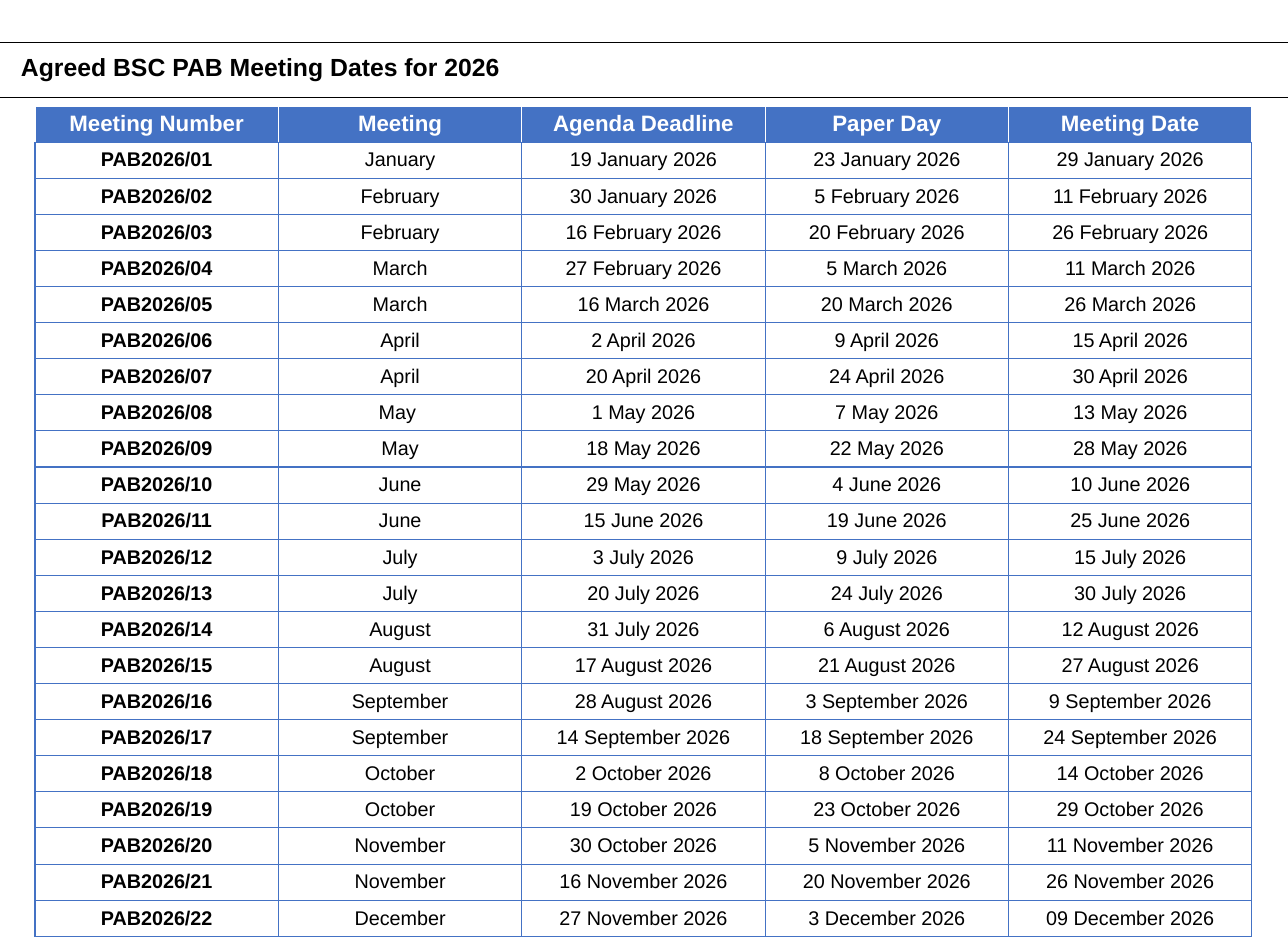
import pptx
import pptx.util
import pptx.dml.color
import pptx.enum.shapes
import pptx.enum.text
import pptx.oxml
import pptx.oxml.ns
from lxml import etree

# Content
YEAR = 2026
TITLE = f"Agreed BSC PAB Meeting Dates for {YEAR}"
HEADERS = ("Meeting Number", "Meeting", "Agenda Deadline", "Paper Day", "Meeting Date")
# month, agenda deadline, paper day, meeting date
MEETINGS = [
    ("January", "19 January", "23 January", "29 January"),
    ("February", "30 January", "5 February", "11 February"),
    ("February", "16 February", "20 February", "26 February"),
    ("March", "27 February", "5 March", "11 March"),
    ("March", "16 March", "20 March", "26 March"),
    ("April", "2 April", "9 April", "15 April"),
    ("April", "20 April", "24 April", "30 April"),
    ("May ", "1 May", "7 May", "13 May"),
    ("May", "18 May", "22 May", "28 May"),
    ("June", "29 May", "4 June", "10 June"),
    ("June", "15 June", "19 June", "25 June"),
    ("July", "3 July", "9 July", "15 July"),
    ("July", "20 July", "24 July", "30 July"),
    ("August", "31 July", "6 August", "12 August"),
    ("August", "17 August", "21 August", "27 August"),
    ("September", "28 August", "3 September", "9 September"),
    ("September", "14 September", "18 September", "24 September"),
    ("October", "2 October", "8 October", "14 October"),
    ("October", "19 October", "23 October", "29 October"),
    ("November", "30 October", "5 November", "11 November"),
    ("November", "16 November", "20 November", "26 November"),
    ("December", "27 November", "3 December", "09 December"),
]

# Theme and layout, lengths in px
THEME = {
    "font": "Arial", "black": "000000", "white": "FFFFFF", "blue": "4472C4",
    "title": 20, "header": 18, "body": 16, "rule": 0.5, "border": 1,
}
SLIDE_W, SLIDE_H = 1288, 949
RULES_Y = (42, 97)
TITLE_BOX = (12, 53, 905, 31)
TABLE_BOX = (35, 106, 1217, 831)
EMU_PER_PX = 914400 / 89.1


def px(n):
    return pptx.util.Emu(round(n * EMU_PER_PX))


def rgb(name):
    return pptx.dml.color.RGBColor.from_string(THEME[name])


def add_run(p, text, size, color, bold):
    r = p.add_run()
    r.text = text
    r.font.name = THEME["font"]
    r.font.size = pptx.util.Pt(THEME[size])
    r.font.bold = bold
    r.font.color.rgb = rgb(color)


def set_borders(cell, colors):
    """Put the four side lines ahead of the cell's fill, in schema order."""
    tc_pr = cell._tc.get_or_add_tcPr()
    for i, (side, color) in enumerate(zip("LRTB", colors)):
        ln = pptx.oxml.parse_xml(
            f'<a:ln{side} {pptx.oxml.ns.nsdecls("a")} w="{pptx.util.Pt(THEME["border"])}">'
            f'<a:solidFill><a:srgbClr val="{THEME[color]}"/></a:solidFill></a:ln{side}>')
        tc_pr.insert(i, ln)


prs = pptx.Presentation()
prs.slide_width, prs.slide_height = px(SLIDE_W), px(SLIDE_H)
s = prs.slides.add_slide(prs.slide_layouts[5])

# Rules above and below the title
for y in RULES_Y:
    rule = s.shapes.add_connector(
        pptx.enum.shapes.MSO_CONNECTOR.STRAIGHT, 0, px(y), px(SLIDE_W), px(y))
    rule.line.color.rgb = rgb("black")
    rule.line.width = pptx.util.Pt(THEME["rule"])
    etree.SubElement(rule._element.spPr, pptx.oxml.ns.qn("a:effectLst"))

# Title
title = s.shapes.title
title.left, title.top, title.width, title.height = map(px, TITLE_BOX)
tf = title.text_frame
tf.word_wrap = True
tf.auto_size = pptx.enum.text.MSO_AUTO_SIZE.NONE
tf.vertical_anchor = pptx.enum.text.MSO_ANCHOR.MIDDLE
p = tf.paragraphs[0]
p.alignment = pptx.enum.text.PP_ALIGN.LEFT
p.line_spacing = 0.9
add_run(p, TITLE, "title", "black", True)

# Meeting table
rows = [HEADERS] + [
    (f"PAB{YEAR}/{n:02}", month, *(f"{day} {YEAR}" for day in days))
    for n, (month, *days) in enumerate(MEETINGS, 1)]
left, top, width, height = TABLE_BOX
table = s.shapes.add_table(len(rows), len(HEADERS), *map(px, TABLE_BOX)).table
for col in table.columns:
    col.width = px(width / len(HEADERS))
for row in table.rows:
    row.height = px(height / len(rows))

for i, texts in enumerate(rows):
    header = i == 0
    for j, text in enumerate(texts):
        cell = table.cell(i, j)
        cell.vertical_anchor = pptx.enum.text.MSO_ANCHOR.MIDDLE
        cell.fill.solid()
        cell.fill.fore_color.rgb = rgb("blue" if header else "white")
        set_borders(cell, ("white", "white", "white", "blue") if header else ("blue",) * 4)
        p = cell.text_frame.paragraphs[0]
        p.alignment = pptx.enum.text.PP_ALIGN.CENTER
        add_run(p, text, "header" if header else "body",
                "white" if header else "black", header or j == 0)

prs.save("out.pptx")
